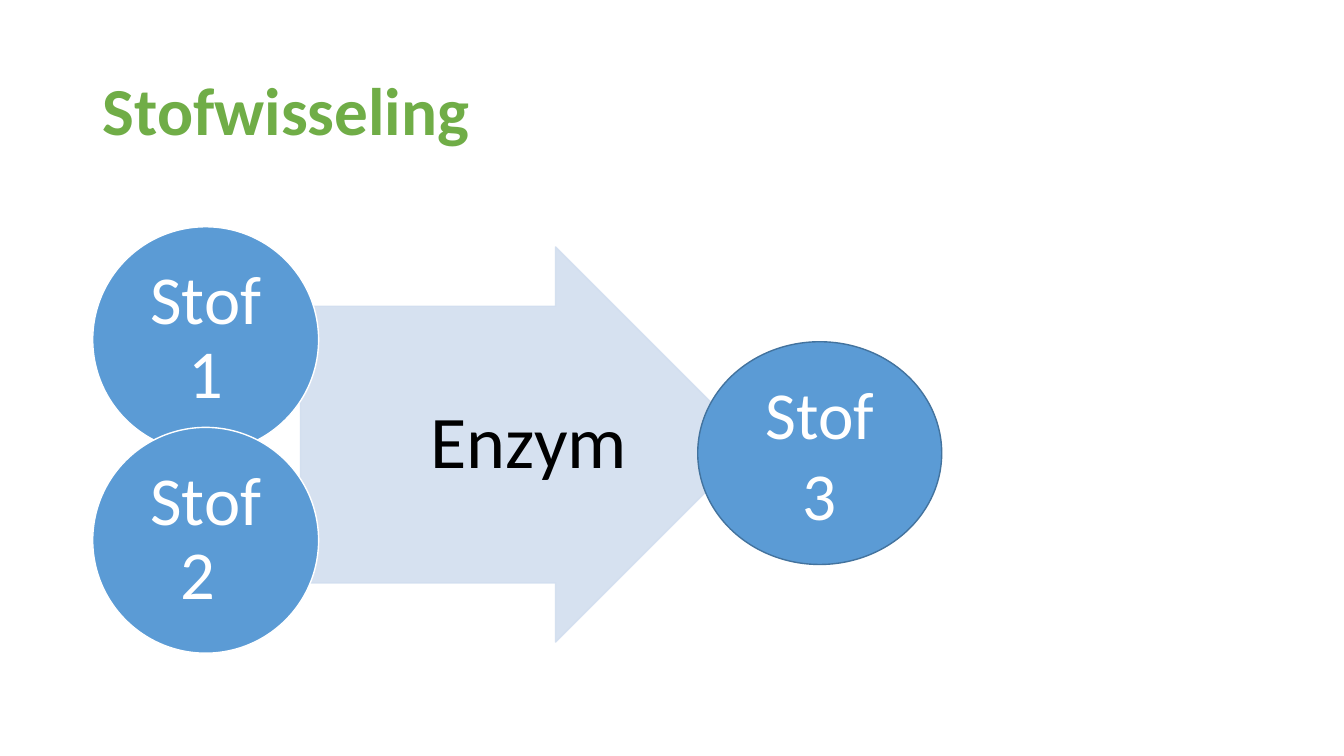
import pptx
import pptx.dml.color
import pptx.enum.shapes
import pptx.enum.text
import pptx.oxml
import pptx.oxml.ns
import pptx.util
from pptx.util import Inches

SHAPE = pptx.enum.shapes.MSO_SHAPE
ALIGN = pptx.enum.text.PP_ALIGN
MIDDLE = pptx.enum.text.MSO_ANCHOR.MIDDLE


def color(code):
    return pptx.dml.color.RGBColor.from_string(code)


class Sketch:
    font = "Calibri"
    blue, pale, green = "5B9BD5", "D2DEEF", "70AD47"
    white, black, edge = "FFFFFF", "000000", "43739E"

    def __init__(self, slide):
        self.shapes = slide.shapes

    def letter(self, shape, text, size, ink, align=ALIGN.CENTER,
               bold=False, pads=(0.1, 0.05, 0.1, 0.05), lead=0.9):
        """Fill a shape's text frame; pads are left, top, right, bottom."""
        frame = shape.text_frame
        left, top, right, bottom = map(Inches, pads)
        look = {"word_wrap": True, "vertical_anchor": MIDDLE,
                "margin_left": left, "margin_top": top,
                "margin_right": right, "margin_bottom": bottom}
        for name, value in look.items():
            setattr(frame, name, value)
        line = frame.paragraphs[0]
        line.alignment, line.line_spacing = align, lead
        run = line.add_run()
        run.text = text
        style = {"name": self.font, "size": pptx.util.Pt(size), "bold": bold}
        for name, value in style.items():
            setattr(run.font, name, value)
        run.font.color.rgb = color(ink)

    def label(self, box, text, size, ink, **style):
        self.letter(self.shapes.add_textbox(*map(Inches, box)),
                    text, size, ink, **style)

    def shape(self, kind, box, fill, edge):
        item = self.shapes.add_shape(kind, *map(Inches, box))
        item.shadow.inherit = False
        item.fill.solid()
        item.fill.fore_color.rgb = color(fill)
        item.line.color.rgb = color(edge)
        item.line.width = pptx.util.Pt(1)
        return item

    def arrow(self, box, alpha):
        """Draw a block arrow; alpha is its opacity in percent."""
        item = self.shape(SHAPE.RIGHT_ARROW, box, self.pale, self.pale)
        item.adjustments[0], item.adjustments[1] = 0.7, 0.5
        tag = pptx.oxml.ns.qn("a:srgbClr")
        for tint in item.element.spPr.iter(tag):
            node = pptx.oxml.parse_xml(
                f'<a:alpha {pptx.oxml.ns.nsdecls("a")} val="{alpha * 1000}"/>')
            tint.append(node)

    def disc(self, box, text, size, edge, **style):
        item = self.shape(SHAPE.OVAL, box, self.blue, edge)
        self.letter(item, text, size, self.white, **style)


def main():
    deck = pptx.Presentation()
    deck.slide_width, deck.slide_height = Inches(13.33), Inches(7.5)
    art = Sketch(deck.slides.add_slide(deck.slide_layouts[6]))

    art.label((0.92, 0.4, 11.5, 1.45), "Stofwisseling", 48, art.green,
              align=ALIGN.LEFT, bold=True)
    art.arrow((2.98, 2.45, 4.49, 3.92), 90)
    art.label((4.11, 3.03, 2.19, 2.75), "Enzym", 53, art.black,
              pads=(0.15, 0.04, 0.07, 0.04))
    for top, text in ((2.25, "Stof 1"), (4.24, "Stof 2 ")):
        art.disc((0.92, top, 2.24, 2.24), text, 49, art.white,
                 pads=(0.03,) * 4)
    art.disc((6.92, 3.39, 2.42, 2.21), "Stof 3", 48, art.edge, lead=1.0)

    deck.save("out.pptx")


if __name__ == "__main__":
    main()
